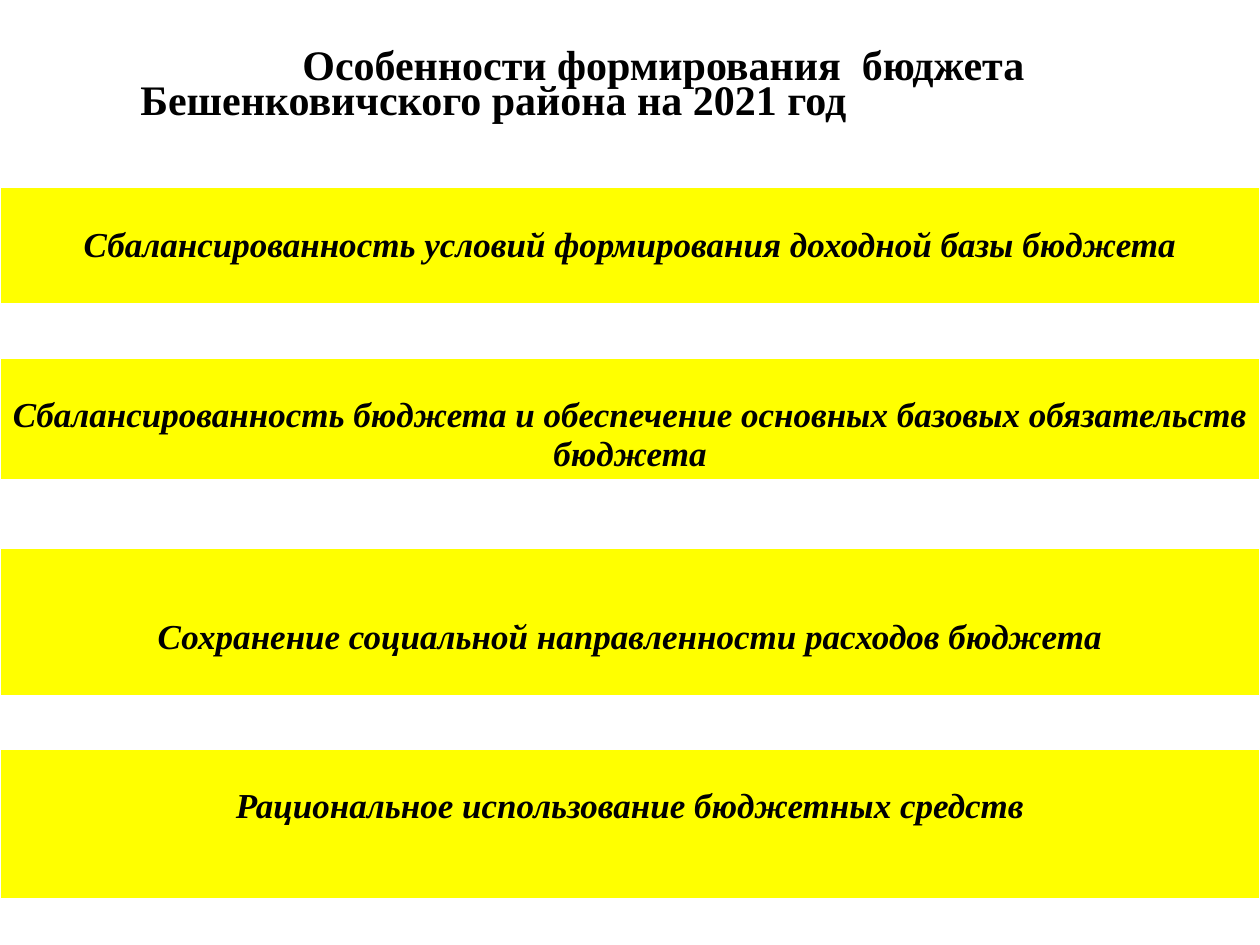
from dataclasses import dataclass

from lxml.etree import SubElement
from pptx import Presentation
from pptx.dml.color import RGBColor
from pptx.enum.text import MSO_ANCHOR, PP_ALIGN
from pptx.oxml.ns import qn
from pptx.util import Emu, Pt


@dataclass(frozen=True)
class Theme:
    font: str = "Times New Roman"
    ink: str = "000000"
    band: str = "FFFF00"
    paper: str = "FFFFFF"
    title: int = 24
    body: int = 20
    pitch: int = 20


def px(num):
    return Emu(round(num * 914400 / 126))


class Deck:
    """Draws styled elements on the current slide."""

    def __init__(self, theme):
        self.theme = theme
        self.file = Presentation()
        self.file.slide_width, self.file.slide_height = px(1260), px(945)
        self.slide = self.file.slides.add_slide(self.file.slide_layouts[6])

    def run(self, para, text, size, slant=False):
        run = para.add_run()
        run.text = text
        font = run.font
        font.name, font.size = self.theme.font, Pt(size)
        font.bold, font.italic = True, slant
        font.color.rgb = RGBColor.from_string(self.theme.ink)

    def title(self, box, lines):
        frame = self.slide.shapes.add_textbox(*map(px, box)).text_frame
        frame.word_wrap = True
        frame.vertical_anchor = MSO_ANCHOR.TOP
        frame.margin_top = px(15)
        for pos, (text, align) in enumerate(lines):
            para = frame.add_paragraph() if pos else frame.paragraphs[0]
            para.alignment = align
            para.line_spacing = Pt(self.theme.pitch)
            self.run(para, text, self.theme.title)

    def edge(self, cell, side, width):
        line = SubElement(cell._tc.get_or_add_tcPr(), qn(f"a:ln{side}"), w=str(Pt(width)))
        fill = SubElement(line, qn("a:solidFill"))
        SubElement(fill, qn("a:srgbClr"), val=self.theme.paper)

    def cell(self, cell, shade, heavy):
        for side in "LRTB":
            self.edge(cell, side, 3 if side == heavy else 1)
        cell.fill.solid()
        cell.fill.fore_color.rgb = RGBColor.from_string(shade)

    def table(self, left, top, width, rows):
        high = sum(row[0] for row in rows)
        grid = self.slide.shapes.add_table(
            len(rows), 2, px(left), px(top), px(width), px(high)).table
        grid.horz_banding = False
        for pos, (tall, text, inset) in enumerate(rows):
            grid.rows[pos].height = px(tall)
            first, last = grid.cell(pos, 0), grid.cell(pos, 1)
            heavy = {0: "B", 1: "T"}.get(pos)
            for cell in (first, last):
                self.cell(cell, self.theme.band if text else self.theme.paper, heavy)
            if pos != 1:
                first.merge(last)
            if text:
                first.margin_left = first.margin_right = px(10)
                first.margin_top, first.margin_bottom = px(inset), 0
                para = first.text_frame.paragraphs[0]
                para.alignment = PP_ALIGN.CENTER
                self.run(para, text, self.theme.body, True)


def main():
    deck = Deck(Theme())
    deck.title((128, 39, 1071, 168), [
        ("Особенности формирования  бюджета", PP_ALIGN.CENTER),
        ("Бешенковичского района на 2021 год", PP_ALIGN.LEFT),
    ])
    deck.table(0, 187, 1260, [
        (118, "Сбалансированность условий формирования доходной базы бюджета", 39),
        (53, "", 0),
        (120, "Сбалансированность бюджета и обеспечение основных базовых обязательств бюджета", 38),
        (68, "", 0),
        (148, "Сохранение социальной направленности расходов бюджета", 70),
        (53, "", 0),
        (150, "Рациональное использование бюджетных средств", 38),
    ])
    deck.file.save("out.pptx")


if __name__ == "__main__":
    main()
